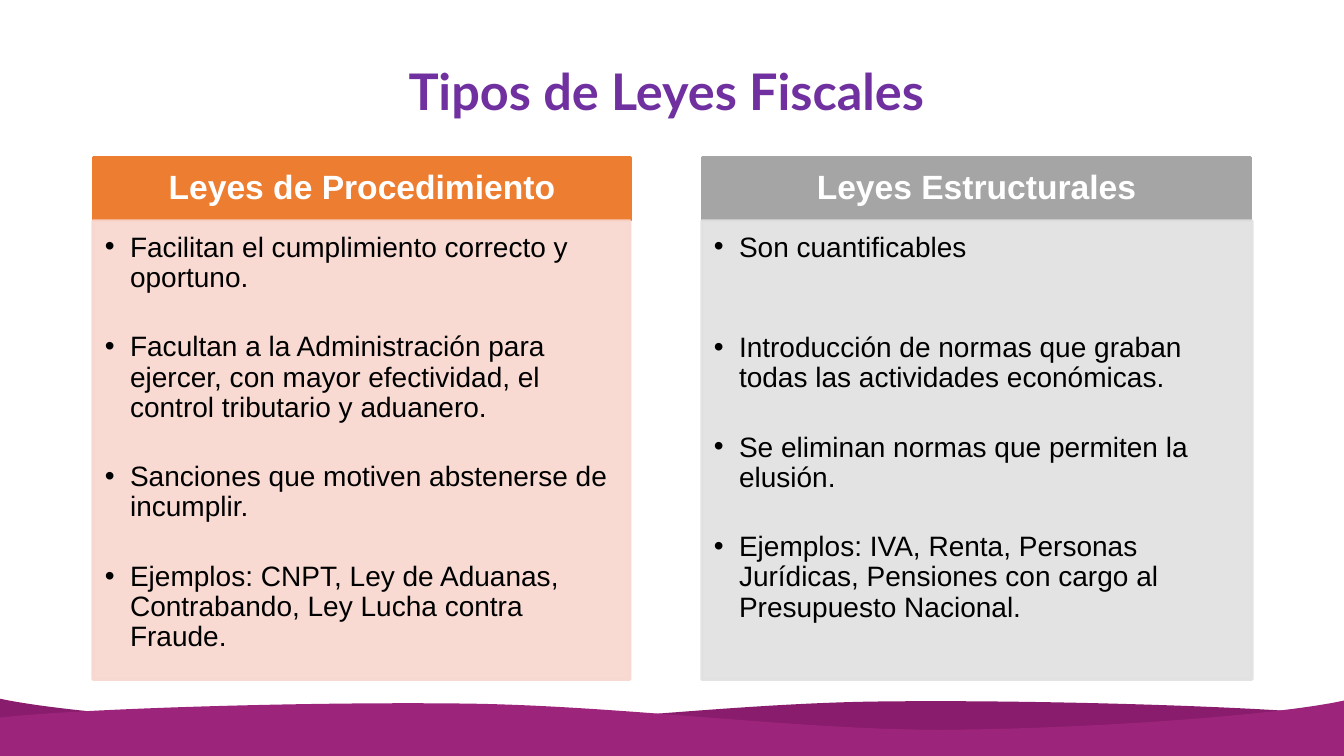
from lxml import etree
from pptx import Presentation
from pptx.dml.color import RGBColor
from pptx.enum.shapes import MSO_SHAPE
from pptx.enum.text import MSO_ANCHOR, PP_ALIGN
from pptx.oxml.ns import qn
from pptx.util import Inches, Pt

COLORS = {
    "title": "7030A0", "text": "000000", "white": "FFFFFF",
    "orange": "ED7D31", "peach": "F8D7CE",
    "gray": "A5A5A5", "silver": "E1E1E1",
    "wave_dark": "891C6C", "wave_light": "9C247B",
}


def paint(sp, color, alpha=None):
    """Give a shape one colour for fill and line, without shadow."""
    sp.shadow.inherit = False
    sp.fill.solid()
    sp.line.fill.solid()
    sp.line.width = Pt(2)
    for fill in (sp.fill, sp.line.fill):
        fill.fore_color.rgb = RGBColor.from_string(COLORS[color])
    if alpha:
        for clr in sp._element.spPr.iter(qn("a:srgbClr")):
            etree.SubElement(clr, qn("a:alpha"), val=str(alpha * 1000))


def style(p, size, color, font="Arial", bold=False):
    p.line_spacing = 0.9
    for r in p.runs:
        r.font.name = font
        r.font.size = Pt(size)
        r.font.bold = bold
        r.font.color.rgb = RGBColor.from_string(COLORS[color])


prs = Presentation()
prs.slide_width, prs.slide_height = Inches(13.33), Inches(7.5)
s = prs.slides.add_slide(prs.slide_layouts[6])

# Waves at the foot: the light one mirrors the dark one
crest = [
    (13.33, 7.1),
    (12.56, 7.01), (10.26, 6.94), (8.7, 6.96),
    (7.15, 6.98), (5.43, 7.22), (3.98, 7.22),
    (2.53, 7.21), (0.68, 7.08), (-0.01, 6.93),
]
outline = crest + [(-0.01, 7.5), (13.33, 7.5)]
mirrored = [(13.32 - x, min(y + 0.02, 7.5)) for x, y in outline]
for color, points in (("wave_dark", outline), ("wave_light", mirrored)):
    points = [(Inches(x), Inches(y)) for x, y in points]
    builder = s.shapes.build_freeform(*points[0])
    builder.add_line_segments(points[1:], close=True)
    sp = builder.convert_to_shape()
    paint(sp, color)
    sp.line.fill.background()
    # Each three crest points become one Bézier curve
    segments = list(sp._element.spPr.iter(qn("a:lnTo")))
    for i in range(0, len(crest) - 1, 3):
        curve = etree.Element(qn("a:cubicBezTo"))
        segments[i].addprevious(curve)
        for segment in segments[i:i + 3]:
            curve.append(segment[0])
            segment.getparent().remove(segment)

# Title
sp = s.shapes.add_textbox(Inches(0.92), Inches(0.21), Inches(11.5), Inches(1.45))
tf = sp.text_frame
tf.word_wrap = True
tf.vertical_anchor = MSO_ANCHOR.MIDDLE
p = tf.paragraphs[0]
p.text = "Tipos de Leyes Fiscales "
p.alignment = PP_ALIGN.CENTER
style(p, 36, "title", "Lato", True)

# Columns: head (left, width, colour), body (left, width, colour), first gap, items
columns = [
    ("Leyes de Procedimiento", (0.93, 5.32, "orange"), (0.92, 5.33, "peach"), 28, [
        "Facilitan el cumplimiento correcto y oportuno.",
        "Facultan a la Administración para ejercer, con mayor efectividad, "
        "el control tributario y aduanero.",
        "Sanciones que motiven abstenerse de incumplir.",
        "Ejemplos: CNPT, Ley de Aduanas, Contrabando, Ley Lucha contra Fraude.",
    ]),
    ("Leyes Estructurales", (6.97, 5.43, "gray"), (6.96, 5.46, "silver"), 50, [
        "Son cuantificables",
        "Introducción de normas que graban todas las actividades económicas.",
        "Se eliminan normas que permiten la elusión.",
        "Ejemplos: IVA, Renta, Personas Jurídicas, Pensiones con cargo al "
        "Presupuesto Nacional.",
    ]),
]
for heading, head, body, first_gap, items in columns:
    # Heading bar
    left, width, color = head
    sp = s.shapes.add_shape(MSO_SHAPE.RECTANGLE, Inches(left), Inches(1.56),
                            Inches(width), Inches(0.63))
    paint(sp, color)
    tf = sp.text_frame
    tf.word_wrap = True
    tf.vertical_anchor = MSO_ANCHOR.MIDDLE
    tf.margin_left = tf.margin_right = Inches(0.19)
    tf.margin_top = tf.margin_bottom = Inches(0.11)
    p = tf.paragraphs[0]
    p.text = heading
    p.alignment = PP_ALIGN.CENTER
    style(p, 24, "white", bold=True)

    # Bulleted panel
    left, width, color = body
    sp = s.shapes.add_shape(MSO_SHAPE.RECTANGLE, Inches(left), Inches(2.19),
                            Inches(width), Inches(4.55))
    paint(sp, color, alpha=90)
    tf = sp.text_frame
    tf.word_wrap = True
    tf.vertical_anchor = MSO_ANCHOR.TOP
    tf.margin_left = tf.margin_top = Inches(0.12)
    tf.margin_right, tf.margin_bottom = Inches(0.16), Inches(0.17)
    tf.text = "\n".join(items)
    for i, p in enumerate(tf.paragraphs):
        p.alignment = PP_ALIGN.LEFT
        p.space_after = Pt(first_gap if i == 0 else 28)
        style(p, 20, "text")
        pPr = p._p.get_or_add_pPr()
        pPr.set("marL", str(Inches(0.25)))
        pPr.set("indent", str(Inches(-0.25)))
        bu_color = etree.SubElement(pPr, qn("a:buClr"))
        etree.SubElement(bu_color, qn("a:srgbClr"), val=COLORS["text"])
        etree.SubElement(pPr, qn("a:buFont"), typeface="Arial")
        etree.SubElement(pPr, qn("a:buChar"), char="•")

prs.save("out.pptx")
